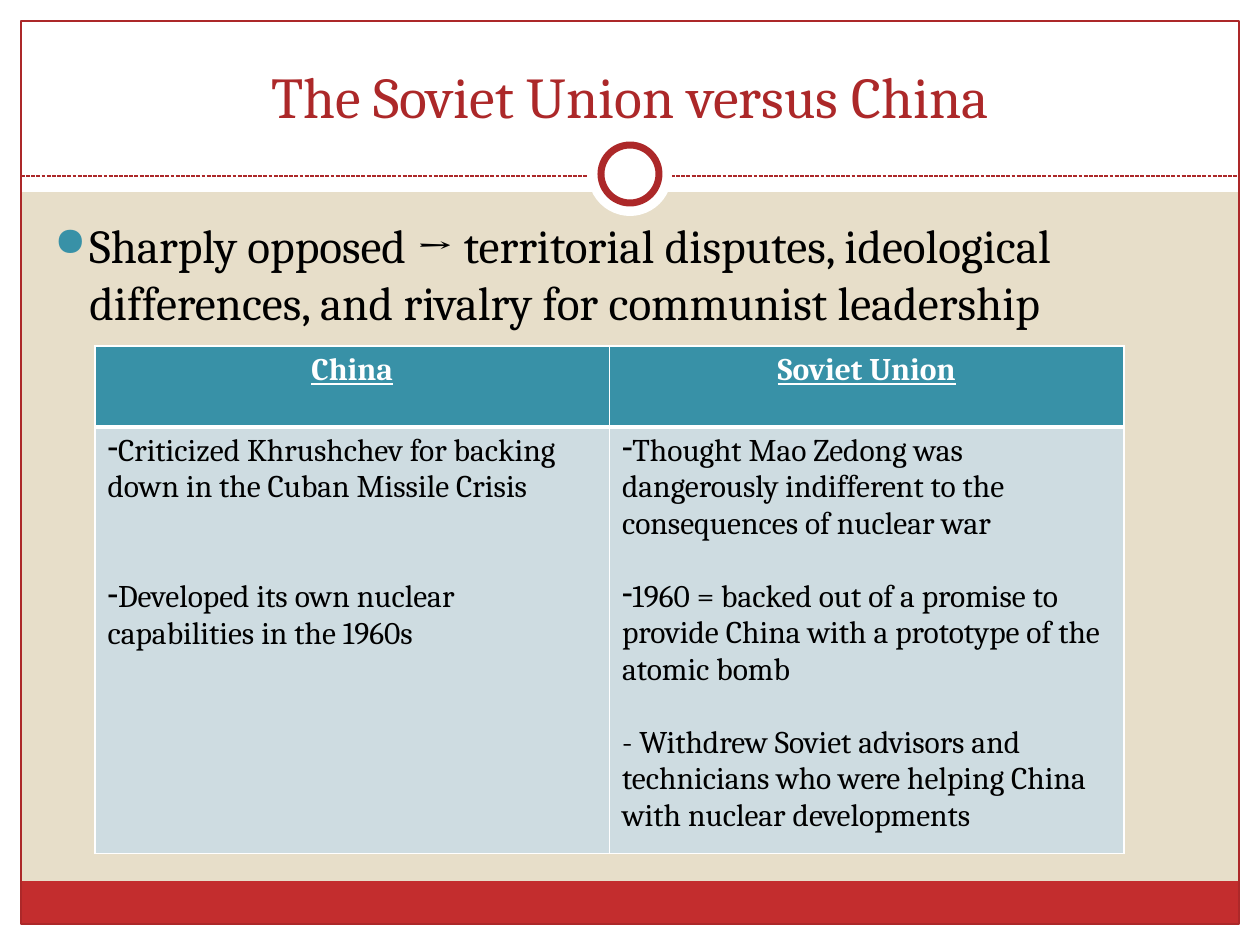
from dataclasses import dataclass

from lxml.etree import SubElement
from pptx import Presentation
from pptx.dml.color import RGBColor
from pptx.enum.dml import MSO_LINE
from pptx.enum.shapes import MSO_CONNECTOR, MSO_SHAPE
from pptx.enum.text import MSO_ANCHOR, PP_ALIGN
from pptx.oxml.ns import qn
from pptx.util import Pt

PX = 914400 / 126
WIDTH, HEIGHT = 1260, 945
MARGIN = 21


@dataclass(frozen=True)
class Theme:
    font: str = "Cambria"
    sand: str = "E7DEC9"
    white: str = "FFFFFF"
    black: str = "000000"
    red: str = "C32D2E"
    dark_red: str = "AC2829"
    teal: str = "3891A7"
    pale_teal: str = "CEDCE1"
    title_size: int = 33
    body_size: int = 27
    table_size: int = 18
    table_line: int = 21


def emu(px):
    return round(px * PX)


def rgb(color):
    return RGBColor.from_string(color)


class SlideBuilder:
    def __init__(self, slide, theme):
        self.slide = slide
        self.theme = theme
        background = slide.background.fill
        background.solid()
        background.fore_color.rgb = rgb(theme.sand)

    def shape(self, kind, box, fill=None, line=None, weight=0.75):
        shape = self.slide.shapes.add_shape(kind, *map(emu, box))
        shape.shadow.inherit = False
        if fill:
            shape.fill.solid()
            shape.fill.fore_color.rgb = rgb(fill)
        else:
            shape.fill.background()
        if line:
            shape.line.color.rgb = rgb(line)
            shape.line.width = Pt(weight)
        else:
            shape.line.fill.background()

    def circle(self, center, diameter, **style):
        x, y = center
        radius = diameter / 2
        self.shape(MSO_SHAPE.OVAL, (x - radius, y - radius, diameter, diameter), **style)

    def dashed_line(self, left, right, y):
        line = self.slide.shapes.add_connector(
            MSO_CONNECTOR.STRAIGHT, *map(emu, (left, y, right, y)))
        line.line.color.rgb = rgb(self.theme.dark_red)
        line.line.width = Pt(0.75)
        line.line.dash_style = MSO_LINE.SQUARE_DOT
        SubElement(line._element.spPr, qn("a:effectLst"))

    def style(self, paragraph, size, color, bold=False, underline=False):
        font = paragraph.font
        font.name, font.size = self.theme.font, Pt(size)
        font.bold, font.underline = bold, underline
        font.color.rgb = rgb(color)

    def bullet(self, paragraph, character, indent=0, color=None, percent=None):
        """Give the paragraph a bullet with a hanging indent in px."""
        properties = paragraph._p.get_or_add_pPr()
        properties.set("marL", str(emu(indent)))
        properties.set("indent", str(-emu(indent)))
        if color:
            SubElement(SubElement(properties, qn("a:buClr")), qn("a:srgbClr"), val=color)
        if percent:
            SubElement(properties, qn("a:buSzPct"), val=str(percent * 1000))
        SubElement(properties, qn("a:buChar"), char=character)

    def text(self, box, text, anchor):
        """Add a wrapping text box and return its paragraph for styling."""
        frame = self.slide.shapes.add_textbox(*map(emu, box)).text_frame
        frame.word_wrap = True
        frame.vertical_anchor = anchor
        paragraph = frame.paragraphs[0]
        paragraph.text = text
        return paragraph

    def title(self, box, text):
        paragraph = self.text(box, text, MSO_ANCHOR.BOTTOM)
        paragraph.alignment = PP_ALIGN.CENTER
        self.style(paragraph, self.theme.title_size, self.theme.dark_red)

    def body(self, box, text):
        paragraph = self.text(box, text, MSO_ANCHOR.TOP)
        self.bullet(paragraph, "●", 35, self.theme.teal, 85)
        self.style(paragraph, self.theme.body_size, self.theme.black)

    def cell_borders(self, cell, **weights):
        properties = cell._tc.get_or_add_tcPr()
        for index, side in enumerate("LRTB"):
            line = properties.makeelement(
                qn(f"a:ln{side}"), {"w": str(Pt(weights.get(side, 1)))})
            fill = SubElement(line, qn("a:solidFill"))
            SubElement(fill, qn("a:srgbClr"), val=self.theme.white)
            properties.insert(index, line)

    def fill_cell(self, cell, color):
        cell.fill.solid()
        cell.fill.fore_color.rgb = rgb(color)

    def header_cell(self, cell, text):
        theme = self.theme
        self.fill_cell(cell, theme.teal)
        self.cell_borders(cell, B=3)
        paragraph = cell.text_frame.paragraphs[0]
        paragraph.text = text
        paragraph.alignment = PP_ALIGN.CENTER
        self.style(paragraph, theme.table_size, theme.white, bold=True, underline=True)

    def points_cell(self, cell, points, gap_lines):
        theme = self.theme
        self.fill_cell(cell, theme.pale_teal)
        self.cell_borders(cell, T=3)
        frame = cell.text_frame
        for index, text in enumerate(points):
            paragraph = frame.add_paragraph() if index else frame.paragraphs[0]
            paragraph.text = text
            if not text.startswith("-"):
                self.bullet(paragraph, "-")
            if index:
                paragraph.space_before = Pt(gap_lines * theme.table_line)
            self.style(paragraph, theme.table_size, theme.black)

    def table(self, box, row_heights, columns):
        table = self.slide.shapes.add_table(2, len(columns), *map(emu, box)).table
        table.first_row = table.horz_banding = False
        for row, height in zip(table.rows, row_heights):
            row.height = emu(height)
        for index, (heading, points, gap_lines) in enumerate(columns):
            self.header_cell(table.cell(0, index), heading)
            self.points_cell(table.cell(1, index), points, gap_lines)


COLUMNS = [
    ("China", [
        "Criticized Khrushchev for backing down in the Cuban Missile Crisis",
        "Developed its own nuclear capabilities in the 1960s",
    ], 2),
    ("Soviet Union", [
        "Thought Mao Zedong was dangerously indifferent to the consequences of nuclear war",
        "1960 = backed out of a promise to provide China with a prototype of the atomic bomb",
        "- Withdrew Soviet advisors and technicians who were helping China with "
        "nuclear developments",
    ], 1),
]


def main():
    theme = Theme()
    presentation = Presentation()
    presentation.slide_width, presentation.slide_height = emu(WIDTH), emu(HEIGHT)
    builder = SlideBuilder(
        presentation.slides.add_slide(presentation.slide_layouts[6]), theme)

    inner_width, inner_height = WIDTH - 2 * MARGIN, HEIGHT - 2 * MARGIN
    for band in ((0, HEIGHT - MARGIN, WIDTH, MARGIN), (0, 0, WIDTH, 192),
                 (0, 0, MARGIN, HEIGHT), (WIDTH - MARGIN, 0, MARGIN, HEIGHT)):
        builder.shape(MSO_SHAPE.RECTANGLE, band, fill=theme.white)
    builder.shape(MSO_SHAPE.RECTANGLE, (MARGIN, 881, inner_width, 43), fill=theme.red)
    builder.shape(MSO_SHAPE.RECTANGLE, (MARGIN, MARGIN, inner_width, inner_height),
                  line=theme.dark_red)
    builder.dashed_line(MARGIN, WIDTH - MARGIN, 176)
    center = (WIDTH / 2, 174)
    builder.circle(center, 84, fill=theme.white)
    builder.circle(center, 58, fill=theme.white, line=theme.dark_red, weight=4)

    builder.title((42, 31, 1176, 105), "The Soviet Union versus China")
    builder.body((42, 210, 1172, 630),
                 "Sharply opposed → territorial disputes, ideological differences, "
                 "and rivalry for communist leadership")
    builder.table((95, 346, 1029, 493), (81, 412), COLUMNS)
    presentation.save("out.pptx")


if __name__ == "__main__":
    main()
